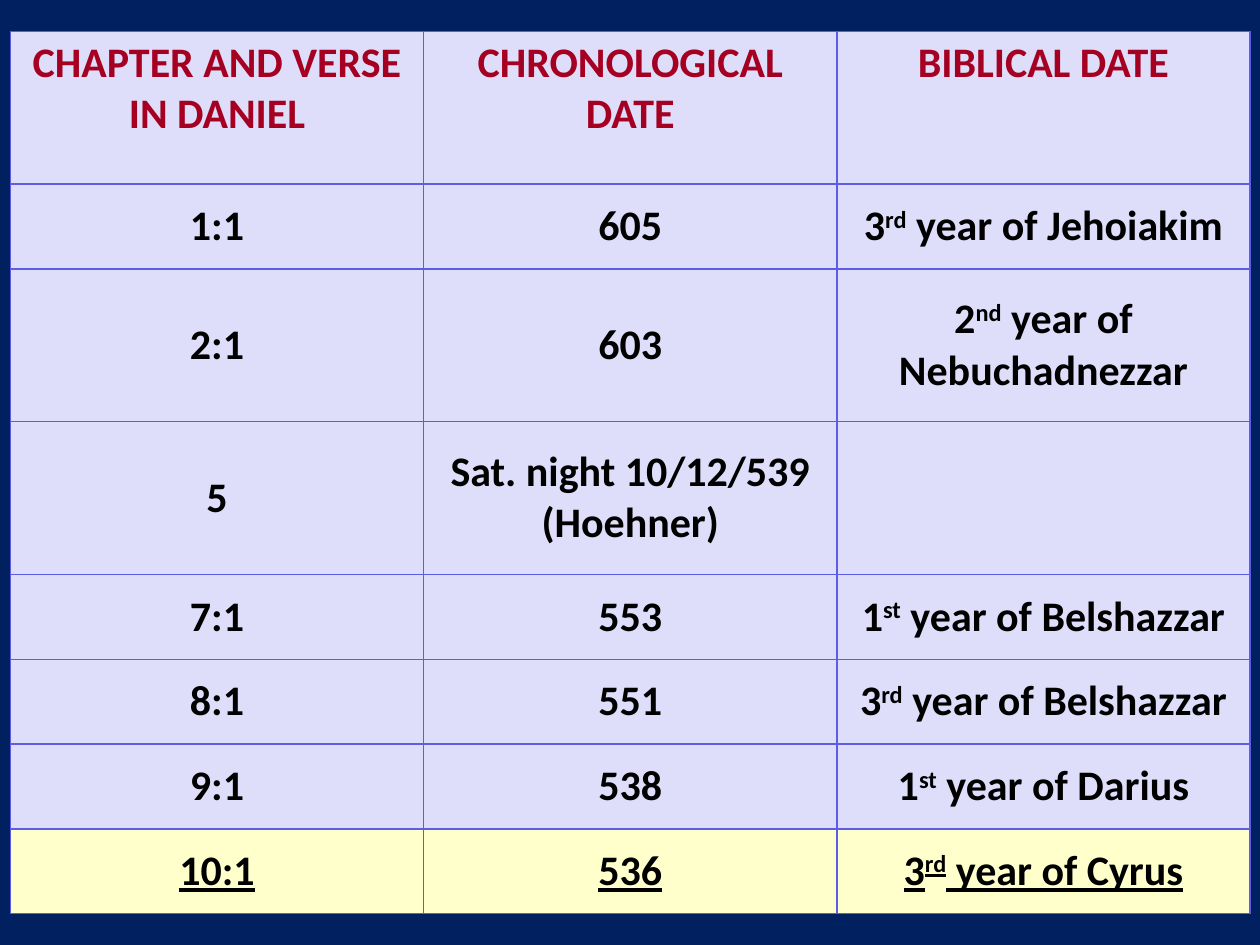
from lxml import etree
from pptx import Presentation
from pptx import util as u
from pptx.dml.color import RGBColor
from pptx.enum import text
from pptx.oxml import ns

NAVY = RGBColor(0x00, 0x20, 0x60)
LILAC = RGBColor(0xDE, 0xDE, 0xFA)
CREAM = RGBColor(0xFF, 0xFF, 0xCC)
RED = RGBColor(0xA5, 0x00, 0x21)
BLACK = RGBColor(0x00, 0x00, 0x00)
VIOLET = RGBColor(0x5C, 0x5C, 0xE7)

TALL, LOW = 3.08, 1.71
HEADS = ("CHAPTER AND VERSE IN DANIEL", "CHRONOLOGICAL DATE", "BIBLICAL DATE")
DATES = (
    (LOW, "1:1", "605", ("3", "rd", " year of Jehoiakim")),
    (TALL, "2:1", "603", ("2", "nd", " year of Nebuchadnezzar")),
    (TALL, "5", "Sat. night 10/12/539 (Hoehner)", ()),
    (LOW, "7:1", "553", ("1", "st", " year of Belshazzar")),
    (LOW, "8:1", "551", ("3", "rd", " year of Belshazzar")),
    (LOW, "9:1", "538", ("1", "st", " year of Darius")),
    (LOW, "10:1", "536", ("3", "rd", " year of Cyrus")),
)


def add_edges(cell):
    """Draw a thin violet line on all four sides of a cell."""
    props = cell._tc.get_or_add_tcPr()
    for side in ("lnL", "lnR", "lnT", "lnB"):
        line = etree.SubElement(props, ns.qn(f"a:{side}"), w=str(u.Pt(1)))
        fill = etree.SubElement(line, ns.qn("a:solidFill"))
        etree.SubElement(fill, ns.qn("a:srgbClr"), val=str(VIOLET))


def fill_cell(cell, parts, ink, back, under=False):
    """Style a cell and write its runs, the second one raised."""
    add_edges(cell)
    cell.fill.solid()
    cell.fill.fore_color.rgb = back
    para = cell.text_frame.paragraphs[0]
    para.alignment = text.PP_ALIGN.CENTER
    para.space_before = u.Pt(4.8)
    for place, part in enumerate(parts):
        run = para.add_run()
        run.text = part
        font = run.font
        font.name, font.size, font.bold = "Calibri", u.Pt(24), True
        font.color.rgb = ink
        if under:
            font.underline = True
        if place == 1:
            run._r.get_or_add_rPr().set("baseline", "30000")


def add_dates(slide, left, top, width):
    """Build the table of dates in the given box."""
    tall = [TALL] + [row[0] for row in DATES]
    frame = slide.shapes.add_table(
        len(tall), len(HEADS), u.Cm(left), u.Cm(top), u.Cm(width), u.Cm(sum(tall)))
    table = frame.table
    table.first_row = table.horz_banding = False
    for col in table.columns:
        col.width = u.Cm(width / len(HEADS))
    for row, size in zip(table.rows, tall):
        row.height = u.Cm(size)
    for col, head in enumerate(HEADS):
        fill_cell(table.cell(0, col), (head,), RED, LILAC)
    for num, (_, verse, date, reign) in enumerate(DATES, 1):
        last = num == len(DATES)
        for col, parts in enumerate(((verse,), (date,), reign)):
            cell = table.cell(num, col)
            cell.vertical_anchor = text.MSO_ANCHOR.MIDDLE
            fill_cell(cell, parts, BLACK, CREAM if last else LILAC, last)


def main():
    """Make the slide and save it."""
    deck = Presentation()
    deck.slide_width, deck.slide_height = u.Cm(25.4), u.Cm(19.05)
    slide = deck.slides.add_slide(deck.slide_layouts[6])
    back = slide.background.fill
    back.solid()
    back.fore_color.rgb = NAVY
    add_dates(slide, 0.21, 0.63, 24.99)
    deck.save("out.pptx")


if __name__ == "__main__":
    main()
